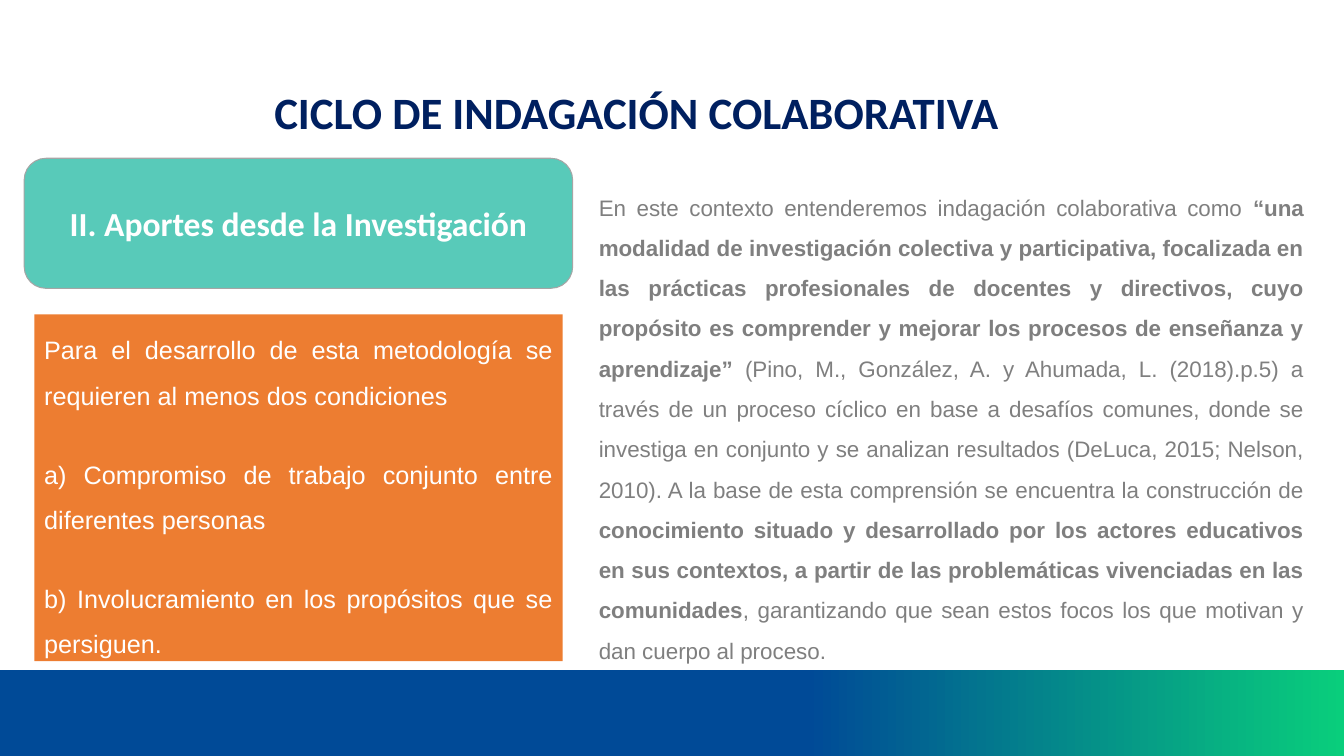
from pptx import Presentation
from pptx.dml.color import RGBColor
from pptx.enum.shapes import MSO_SHAPE as Shape
from pptx.enum.text import MSO_ANCHOR as Anchor, MSO_AUTO_SIZE as AutoSize, PP_ALIGN as Align
from pptx.util import Emu, Pt

EMU_PER_PX = 9144  # 100 px to the inch
COLORS = {
    "navy": "002060", "blue": "004A97", "green": "09CE7C", "teal": "58CAB9",
    "orange": "ED7D31", "border": "A5A5A5", "gray": "7F7F7F", "white": "FFFFFF",
}
TITLE = "CICLO DE INDAGACIÓN COLABORATIVA"
TOPIC = "II. Aportes desde la Investigación"
CONDITIONS = [
    "Para el desarrollo de esta metodología se requieren al menos dos condiciones",
    "a) Compromiso de trabajo conjunto entre diferentes personas",
    "b) Involucramiento en los propósitos que se persiguen.",
]
# Plain and bold passages alternate, starting with a plain one.
DEFINITION = [
    "En este contexto entenderemos indagación colaborativa como ",
    "“una modalidad de investigación colectiva y participativa, focalizada en las "
    "prácticas profesionales de docentes y directivos, cuyo propósito es comprender "
    "y mejorar los procesos de enseñanza y aprendizaje” ",
    "(Pino, M., González, A. y Ahumada, L. (2018).p.5) a través de un proceso cíclico "
    "en base a desafíos comunes, donde se investiga en conjunto y se analizan "
    "resultados (DeLuca, 2015; Nelson, 2010). A la base de esta comprensión se "
    "encuentra la construcción de ",
    "conocimiento situado y desarrollado por los actores educativos en sus contextos, "
    "a partir de las problemáticas vivenciadas en las comunidades",
    ", garantizando que sean estos focos los que motivan y dan cuerpo al proceso.",
]


def px(length):
    return Emu(length * EMU_PER_PX)


def rgb(name):
    return RGBColor.from_string(COLORS[name])


def write(shape, paragraphs, *, size, color, font="Arial", bold=False,
          align=Align.JUSTIFY, anchor=Anchor.TOP, spaced=False, wrap=True):
    """Fill a shape with paragraphs, each a list of (text, bold) runs or a string."""
    frame = shape.text_frame
    frame.auto_size = AutoSize.NONE
    frame.word_wrap = wrap
    frame.vertical_anchor = anchor
    for index, content in enumerate(paragraphs):
        paragraph = frame.add_paragraph() if index else frame.paragraphs[0]
        paragraph.alignment = align
        if spaced:
            paragraph.line_spacing = 1.5
            paragraph.space_before = Pt(8 if index else 0)
            paragraph.space_after = Pt(16)
        runs = [(content, bold)] if isinstance(content, str) else content
        for text, run_bold in runs:
            run = paragraph.add_run()
            run.text = text
            run.font.name = font
            run.font.size = Pt(size)
            run.font.bold = run_bold
            run.font.color.rgb = rgb(color)


class SlideBuilder:
    def __init__(self, presentation):
        self.slide = presentation.slides.add_slide(presentation.slide_layouts[5])

    def title(self, text, left, top, width, height):
        title = self.slide.shapes.title
        title.left, title.top, title.width, title.height = map(px, (left, top, width, height))
        write(title, [text], size=32, color="navy", font="Calibri", bold=True,
              align=Align.LEFT, wrap=False)

    def panel(self, left, top, width, height, fill=None, kind=Shape.RECTANGLE, border=None):
        panel = self.slide.shapes.add_shape(kind, *map(px, (left, top, width, height)))
        panel.shadow.inherit = False
        if fill:
            panel.fill.solid()
            panel.fill.fore_color.rgb = rgb(fill)
        if border:
            panel.line.color.rgb = rgb(border)
            panel.line.width = Pt(0.75)
        else:
            panel.line.fill.background()
        return panel

    def gradient_band(self, left, top, width, height, stops):
        band = self.panel(left, top, width, height)
        band.fill.gradient()
        band.fill.gradient_angle = 0
        for stop, (position, color) in zip(band.fill.gradient_stops, stops):
            stop.position = position
            stop.color.rgb = rgb(color)

    def text_box(self, left, top, width, height):
        return self.slide.shapes.add_textbox(*map(px, (left, top, width, height)))


def main():
    presentation = Presentation()
    presentation.slide_width, presentation.slide_height = px(1333), px(750)
    builder = SlideBuilder(presentation)

    builder.gradient_band(0, 665, 1333, 86, [(0.6, "blue"), (1, "green")])
    builder.title(TITLE, 262, 79, 755, 64)

    topic = builder.panel(24, 157, 544, 129, "teal", Shape.ROUNDED_RECTANGLE, "border")
    write(topic, [TOPIC], size=24, color="white", font="Calibri", bold=True,
          align=Align.CENTER, anchor=Anchor.MIDDLE)

    definition = builder.text_box(584, 174, 719, 490)
    passages = [(text, index % 2 == 1) for index, text in enumerate(DEFINITION)]
    write(definition, [passages], size=16, color="gray", spaced=True)

    conditions = builder.panel(34, 312, 524, 344, "orange")
    write(conditions, CONDITIONS, size=18, color="white", spaced=True)

    presentation.save("out.pptx")


if __name__ == "__main__":
    main()
